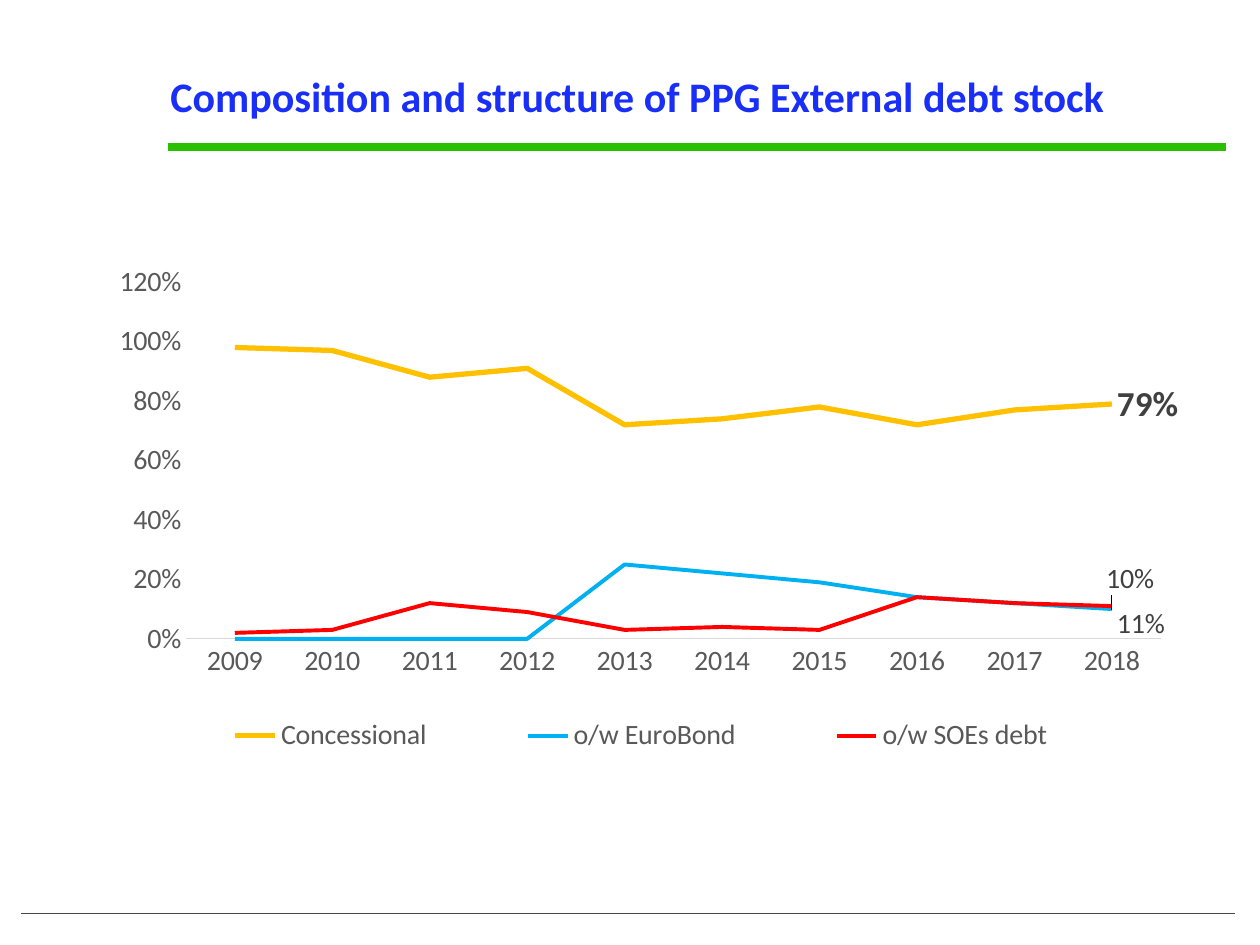
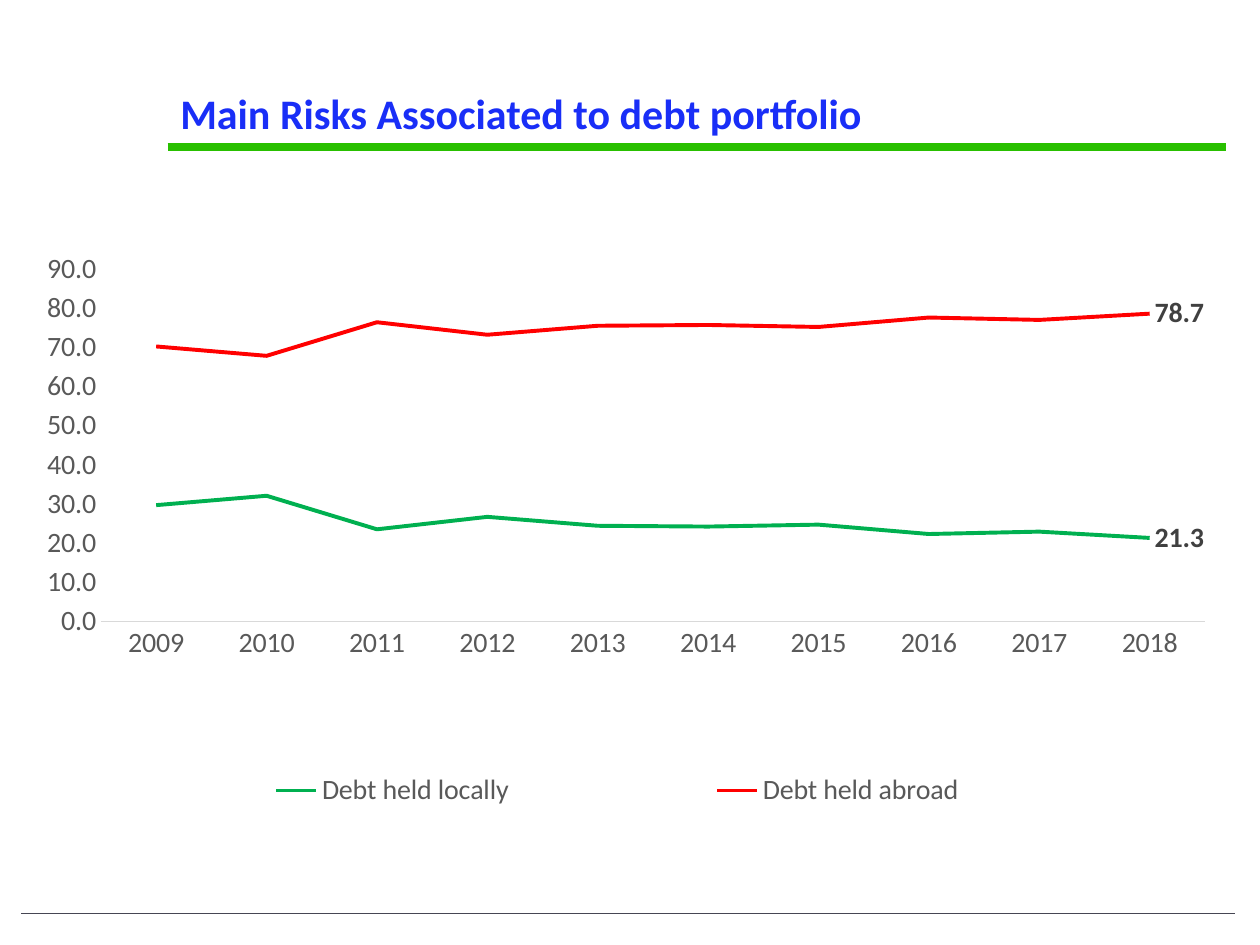
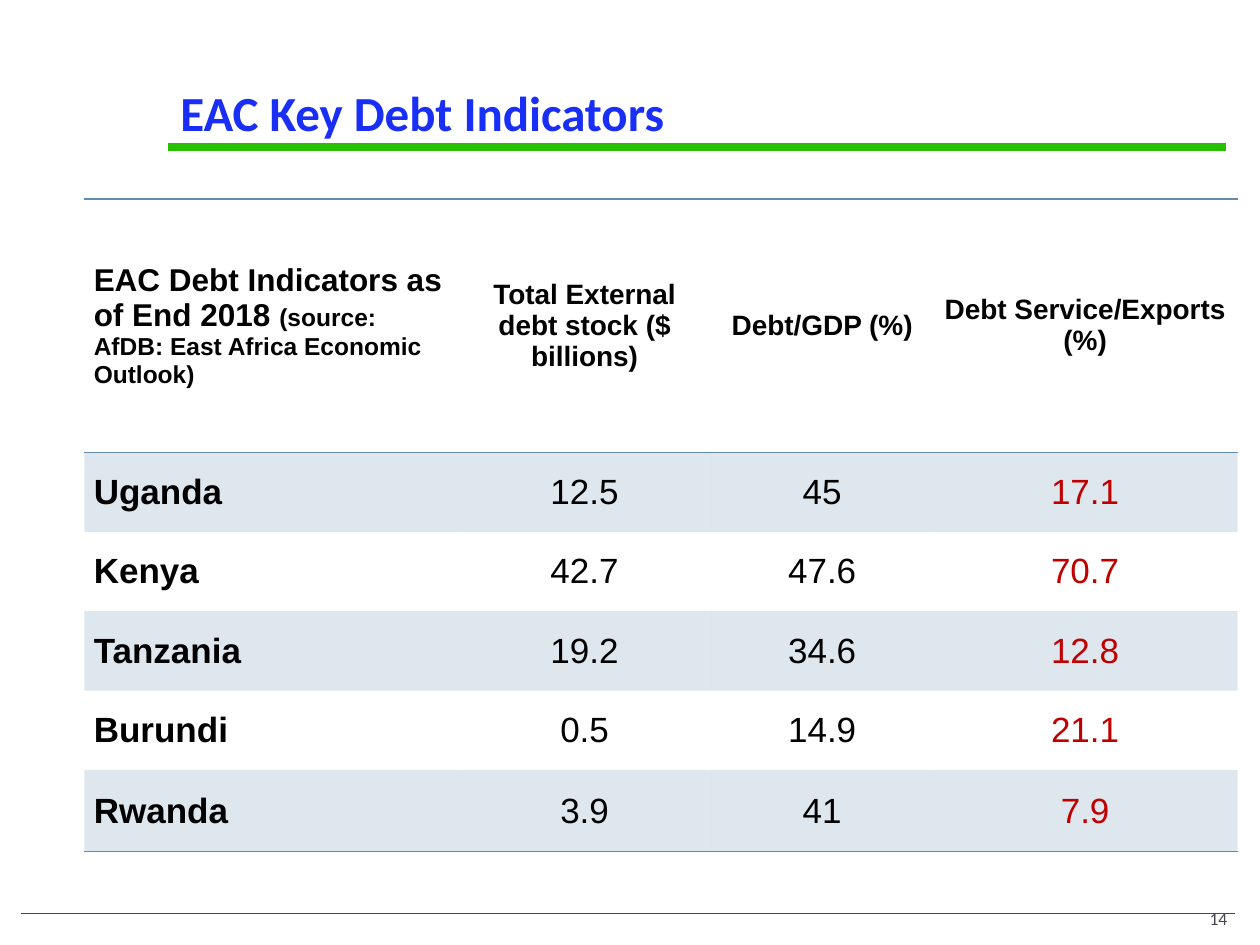
import pptx
import pptx.chart.data
import pptx.dml.color
import pptx.enum.chart
import pptx.enum.shapes
import pptx.enum.text
import pptx.oxml
import pptx.oxml.ns
import pptx.util
from pptx.util import Cm

# Shared style
FONT = "Calibri"
TABLE_FONT = "Arial"
TITLE_BLUE = "192EF7"
RULE_GREEN = "29C000"
FOOTER_GREY = "464653"
AXIS_TEXT = "595959"
AXIS_LINE = "D9D9D9"
LABEL_TEXT = "404040"
TABLE_BLUE = "638BAD"
BLACK = "000000"
ALERT_RED = "C00000"
NO_TABLE_STYLE = "{2D5ABB26-0587-4C30-8999-92F81FD0307C}"

ANCHOR = pptx.enum.text.MSO_ANCHOR
ALIGN = pptx.enum.text.PP_ALIGN
YEARS = [str(year) for year in range(2009, 2019)]


def rgb(hex_colour):
    return pptx.dml.color.RGBColor.from_string(hex_colour)


def set_font(font, size, colour, bold=False, name=FONT):
    font.name = name
    font.size = pptx.util.Pt(size)
    font.bold = bold
    font.color.rgb = rgb(colour)


def cm_box(box):
    return [Cm(length) for length in box]


# Frame shared by all slides
def add_rule(slide, left, right, y, colour, width):
    rule = slide.shapes.add_connector(
        pptx.enum.shapes.MSO_CONNECTOR.STRAIGHT, Cm(left), Cm(y), Cm(right), Cm(y))
    rule.line.color.rgb = rgb(colour)
    rule.line.width = pptx.util.Pt(width)
    rule._element.spPr.append(pptx.oxml.parse_xml(
        f'<a:effectLst {pptx.oxml.ns.nsdecls("a")}/>'))


def add_framed_slide(deck, title_text, box, size=24, anchor=ANCHOR.MIDDLE):
    slide = deck.slides.add_slide(deck.slide_layouts.get_by_name("Title Only"))
    add_rule(slide, 0.43, 24.89, 18.42, FOOTER_GREY, 0.75)
    add_rule(slide, 3.38, 24.71, 2.97, RULE_GREEN, 4.5)

    title = slide.shapes.title
    title.left, title.top, title.width, title.height = cm_box(box)
    frame = title.text_frame
    frame.text = title_text
    frame.word_wrap = True
    frame.auto_size = pptx.enum.text.MSO_AUTO_SIZE.NONE
    frame.vertical_anchor = anchor
    heading = frame.paragraphs[0]
    heading.alignment = ALIGN.LEFT
    set_font(heading.font, size, TITLE_BLUE, bold=True)
    return slide


def add_page_number(slide, number, box):
    frame = slide.shapes.add_textbox(*cm_box(box)).text_frame
    frame.word_wrap = True
    frame.vertical_anchor = ANCHOR.BOTTOM
    paragraph = frame.paragraphs[0]
    paragraph.text = number
    paragraph.alignment = ALIGN.RIGHT
    set_font(paragraph.font, 10, FOOTER_GREY)


# Line charts
def place_manually(parent, index, x, y, size=None, inner=False, edge=True):
    """Give a chart part a layout in fractions of the chart."""
    for old_layout in parent.findall(pptx.oxml.ns.qn("c:layout")):
        parent.remove(old_layout)
    settings = [("layoutTarget", "inner")] if inner else []
    if edge:
        settings += [("xMode", "edge"), ("yMode", "edge")]
    settings += [("x", x), ("y", y)]
    if size:
        settings += zip("wh", size)
    inside = "".join(f'<c:{tag} val="{value}"/>' for tag, value in settings)
    parent.insert(index, pptx.oxml.parse_xml(
        f'<c:layout {pptx.oxml.ns.nsdecls("c")}>'
        f'<c:manualLayout>{inside}</c:manualLayout></c:layout>'))


def label_last_point(series, size, bold, offset):
    series.data_labels.show_value = False
    label = series.points[len(YEARS) - 1].data_label
    set_font(label.font, size, LABEL_TEXT, bold)
    label.position = pptx.enum.chart.XL_LABEL_POSITION.RIGHT
    if offset:
        place_manually(label._get_or_add_dLbl(), 1, *offset, edge=False)


def add_line_chart(slide, box, lines, number_format, top, step, plot, legend):
    """Each line is name, values, colour, width, label size, bold, label offset."""
    chart_data = pptx.chart.data.CategoryChartData(number_format=number_format)
    chart_data.categories = YEARS
    for name, values, *_ in lines:
        chart_data.add_series(name, values)
    chart = slide.shapes.add_chart(
        pptx.enum.chart.XL_CHART_TYPE.LINE, *cm_box(box), chart_data).chart
    chart.has_title = False
    set_font(chart.font, 16, AXIS_TEXT)
    place_manually(chart._chartSpace.chart.plotArea, 0, *plot[:2], plot[2:], inner=True)

    # Axes
    for axis in (chart.category_axis, chart.value_axis):
        axis.has_major_gridlines = False
        axis.major_tick_mark = pptx.enum.chart.XL_TICK_MARK.NONE
        axis.minor_tick_mark = pptx.enum.chart.XL_TICK_MARK.NONE
    chart.category_axis.format.line.color.rgb = rgb(AXIS_LINE)
    chart.category_axis.format.line.width = pptx.util.Pt(0.75)
    values_axis = chart.value_axis
    values_axis.format.line.fill.background()
    values_axis.minimum_scale = 0
    values_axis.maximum_scale = top
    values_axis.major_unit = step
    values_axis.tick_labels.number_format = number_format
    values_axis.tick_labels.number_format_is_linked = False

    # Legend
    chart.has_legend = True
    chart.legend.position = pptx.enum.chart.XL_LEGEND_POSITION.BOTTOM
    chart.legend.include_in_layout = False
    place_manually(chart.legend._element, 1, *legend[:2], legend[2:])

    # Lines and their end labels
    chart.plots[0].vary_by_categories = False
    for series, (_, _, colour, width, *label) in zip(chart.plots[0].series, lines):
        series.smooth = False
        series.format.line.color.rgb = rgb(colour)
        series.format.line.width = pptx.util.Pt(width)
        label_last_point(series, *label)


# Indicator table
def add_border(cell, side):
    cell._tc.get_or_add_tcPr().append(pptx.oxml.parse_xml(
        f'<a:ln{side} {pptx.oxml.ns.nsdecls("a")} w="12700"><a:solidFill>'
        f'<a:srgbClr val="{TABLE_BLUE}"/></a:solidFill></a:ln{side}>'))


def shade(cell):
    cell.fill.solid()
    cell.fill.fore_color.rgb = rgb(TABLE_BLUE)
    tint = cell._tc.tcPr.find(".//" + pptx.oxml.ns.qn("a:solidFill") + "[last()]/"
                              + pptx.oxml.ns.qn("a:srgbClr")) \
        if not cell._tc.tcPr.findall(pptx.oxml.ns.qn("a:lnB")) \
        else cell._tc.tcPr.find(pptx.oxml.ns.qn("a:solidFill"))[0]
    tint.append(pptx.oxml.parse_xml(
        f'<a:alpha {pptx.oxml.ns.nsdecls("a")} val="20000"/>'))


def fill_cell(cell, text, column, size, colour, bold):
    cell.vertical_anchor = ANCHOR.MIDDLE
    cell.margin_left = cell.margin_right = Cm(0.19)
    cell.margin_top = cell.margin_bottom = 0
    paragraph = cell.text_frame.paragraphs[0]
    paragraph.text = text
    paragraph.alignment = ALIGN.CENTER if column else ALIGN.LEFT
    set_font(paragraph.font, size, colour, bold, TABLE_FONT)


def add_indicator_table(slide, left, top, widths, heights, header, source, countries):
    table = slide.shapes.add_table(
        len(heights), len(widths), Cm(left), Cm(top),
        Cm(sum(widths)), Cm(sum(heights))).table
    table.first_row = table.horz_banding = False
    table._tbl.tblPr.find(pptx.oxml.ns.qn("a:tableStyleId")).text = NO_TABLE_STYLE
    for column, width in zip(table.columns, widths):
        column.width = Cm(width)
    for row, height in zip(table.rows, heights):
        row.height = Cm(height)

    for r, texts in enumerate([header] + countries):
        for c, text in enumerate(texts):
            cell = table.cell(r, c)
            if r == 0:
                fill_cell(cell, text, c, 16 if c else 18, BLACK, True)
                add_border(cell, "T")
            else:
                colour = ALERT_RED if c == len(widths) - 1 else BLACK
                fill_cell(cell, text, c, 20, colour, c == 0)
            if r in (0, len(countries)):
                add_border(cell, "B")
            if r % 2:
                shade(cell)
            else:
                cell.fill.background()

    source_run = table.cell(0, 0).text_frame.paragraphs[0].add_run()
    source_run.text = source
    source_run.font.size = pptx.util.Pt(14)


def main():
    deck = pptx.Presentation()
    deck.slide_width, deck.slide_height = Cm(25.4), Cm(19.05)

    # Composition of external debt
    composition = add_framed_slide(
        deck, "Composition and structure of PPG External debt stock",
        (3.18, 0.43, 21.46, 3))
    add_line_chart(
        composition, (2.24, 3.86, 21.59, 12.19),
        [("Concessional",
          [0.98, 0.97, 0.88, 0.91, 0.72, 0.74, 0.78, 0.72, 0.77, 0.79],
          "FFC000", 3, 20, True, None),
         ("o/w EuroBond",
          [0, 0, 0, 0, 0.25, 0.22, 0.19, 0.14, 0.12, 0.10],
          "00B0F0", 2.25, 16, False, (-0.01, -0.05)),
         ("o/w SOEs debt",
          [0.02, 0.03, 0.12, 0.09, 0.03, 0.04, 0.03, 0.14, 0.12, 0.11],
          "FF0000", 2.25, 16, False, (0, 0.03))],
        "0%", 1.2, 0.2, (0.07, 0.15, 0.91, 0.59), (0.03, 0.86, 0.93, 0.08))

    # Local and foreign debt
    risks = add_framed_slide(
        deck, "Main Risks Associated to debt portfolio", (3.38, 1.14, 19.76, 2.26))
    add_line_chart(
        risks, (0.84, 3.99, 23.93, 13.13),
        [("Debt held locally",
          [29.7, 32.1, 23.5, 26.7, 24.4, 24.2, 24.7, 22.3, 22.9, 21.3],
          "00B050", 2.25, 16, True, None),
         ("Debt held abroad",
          [70.3, 67.9, 76.5, 73.3, 75.6, 75.8, 75.3, 77.7, 77.1, 78.7],
          "FF0000", 2.25, 16, True, None)],
        "0.0", 90, 10, (0.05, 0.11, 0.93, 0.54), (0.03, 0.86, 0.91, 0.1))

    # Regional indicators
    indicators = add_framed_slide(
        deck, "EAC Key Debt Indicators", (3.38, 0.64, 21.39, 2.34), 28, ANCHOR.BOTTOM)
    add_page_number(indicators, "14", (19.48, 17.83, 5.51, 1.02))
    add_indicator_table(
        indicators, 1.7, 4.01, [7.52, 5.13, 4.45, 6.15], [5.11] + [1.6] * 4 + [1.65],
        ["EAC Debt Indicators as of End 2018 ", "Total External debt stock ($ billions)",
         "Debt/GDP (%)", "Debt Service/Exports (%)"],
        "(source: AfDB: East Africa Economic Outlook)",
        [["Uganda", "12.5", "45", "17.1"],
         ["Kenya", "42.7", "47.6", "70.7"],
         ["Tanzania", "19.2", "34.6", "12.8"],
         ["Burundi", "0.5", "14.9", "21.1"],
         ["Rwanda", "3.9", "41", "7.9"]])

    deck.save("out.pptx")


if __name__ == "__main__":
    main()
